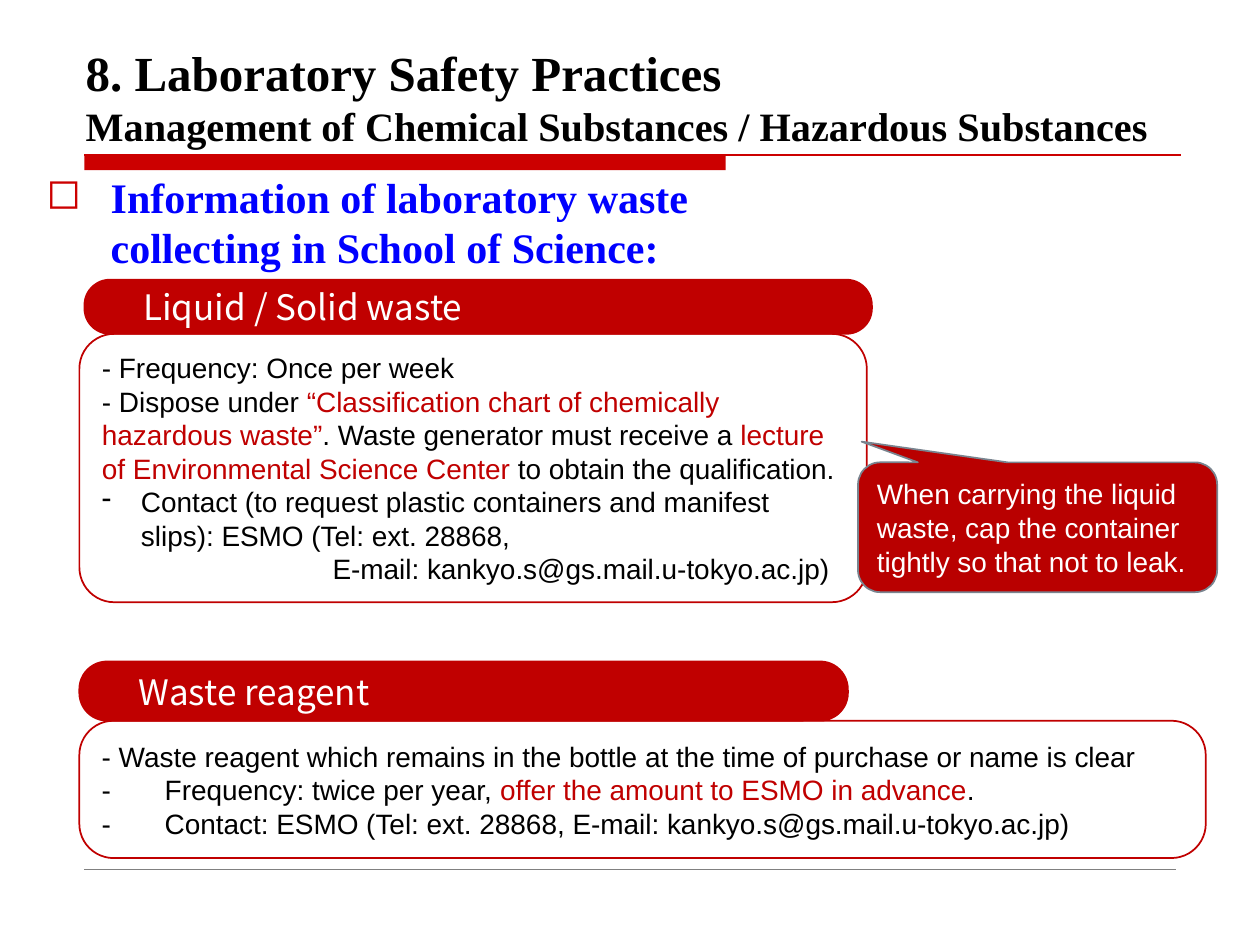
from lxml import etree
from pptx import Presentation
from pptx.dml.color import RGBColor
from pptx.enum import shapes, text
from pptx.oxml.ns import qn
from pptx.util import Inches, Pt

THEME = dict(
    red="C00000", rule="CC0000", callout="B90000", edge="79848F", gray="808080",
    blue="0000FF", black="000000", white="FFFFFF",
    serif="Times New Roman", sans="Arial", label="Noto Sans CJK JP",
    title=28, subtitle=23, heading=24, header=20, body=16,
)
T = THEME
SHAPE = shapes.MSO_SHAPE


def add_box(kind, at, fill, line, adjustments=()):
    sp = s.shapes.add_shape(kind, *map(Inches, at))
    sp.shadow.inherit = False
    sp.fill.solid()
    sp.fill.fore_color.rgb = RGBColor.from_string(T[fill])
    sp.line.color.rgb = RGBColor.from_string(T[line])
    sp.line.width = Pt(1)
    for i, value in enumerate(adjustments):
        sp.adjustments[i] = value
    return sp


def write(tf, paragraphs, font, size, bold=False, anchor=text.MSO_ANCHOR.MIDDLE):
    """Each paragraph is (runs, options); each run is (text, colour[, size])."""
    frame = dict(word_wrap=True, auto_size=text.MSO_AUTO_SIZE.NONE, vertical_anchor=anchor)
    for name, value in frame.items():
        setattr(tf, name, value)
    for i, (runs, options) in enumerate(paragraphs):
        p = tf.add_paragraph() if i else tf.paragraphs[0]
        p.alignment = text.PP_ALIGN.LEFT
        pPr = p._p.get_or_add_pPr()
        left, first = options.get("indent", (0, 0))
        pPr.set("marL", str(Inches(left)))
        pPr.set("indent", str(Inches(first)))
        if "bullet_color" in options:
            color = etree.SubElement(pPr, qn("a:buClr"))
            etree.SubElement(color, qn("a:srgbClr"), val=T[options["bullet_color"]])
        if "bullet" in options:
            etree.SubElement(pPr, qn("a:buChar"), char=options["bullet"])
        if "tab" in options:
            tabs = etree.SubElement(pPr, qn("a:tabLst"))
            etree.SubElement(tabs, qn("a:tab"), pos=str(Inches(options["tab"])), algn="l")
        for j, (words, color, *own_size) in enumerate(runs):
            if words == "\n":
                p.add_line_break()
                continue
            r = p.add_run()
            r.text = words
            style = dict(name=font, size=Pt(own_size[0] if own_size else size), bold=bold)
            for name, value in style.items():
                setattr(r.font, name, value)
            r.font.color.rgb = RGBColor.from_string(T[color])


prs = Presentation()
prs.slide_width, prs.slide_height = Inches(10), Inches(7.5)
s = prs.slides.add_slide(prs.slide_layouts[5])

# Title
title = s.shapes.title
title.left, title.top, title.width, title.height = map(Inches, (0.58, 0.42, 8.75, 0.82))
write(title.text_frame, [([
    ("8. Laboratory Safety Practices", "black"),
    ("\n", "black"),
    ("Management of Chemical Substances / Hazardous Substances", "black", T["subtitle"]),
], {})], T["serif"], T["title"], bold=True, anchor=text.MSO_ANCHOR.BOTTOM)

# Title bar and rules
bar = add_box(SHAPE.RECTANGLE, (0.67, 1.23, 5.09, 0.12), "rule", "rule")
bar.line.fill.background()
for y, right, color, width in ((1.23, 9.37, "rule", 0.75), (6.9, 9.33, "gray", 0.25)):
    rule = s.shapes.add_connector(shapes.MSO_CONNECTOR.STRAIGHT,
                                  Inches(0.67), Inches(y), Inches(right), Inches(y))
    rule.line.color.rgb = RGBColor.from_string(T[color])
    rule.line.width = Pt(width)
    etree.SubElement(rule._element.spPr, qn("a:effectLst"))

# Section heading
heading = s.shapes.add_textbox(*map(Inches, (0.27, 1.31, 6.69, 0.94)))
write(heading.text_frame, [(
    [("Information of laboratory waste collecting in School of Science:", "blue")],
    dict(indent=(0.51, -0.51), bullet="◻", bullet_color="rule"),
)], T["serif"], T["heading"], bold=True, anchor=text.MSO_ANCHOR.TOP)

# Waste panels
tab = dict(tab=0.19)
liquid = [
    ([("- Frequency: Once per week", "black")], tab),
    ([("- Dispose under ", "black"),
      ("“Classification chart of chemically hazardous waste”", "red"),
      (". Waste generator must receive a", "black"),
      (" lecture of Environmental Science Center", "red"),
      (" to obtain the qualification.", "black")], tab),
    ([("Contact (to request plastic containers and manifest slips): "
       "ESMO (Tel: ext. 28868,", "black")],
     dict(tab, indent=(0.31, -0.31), bullet="-")),
    ([("E-mail: kankyo.s@gs.mail.u-tokyo.ac.jp)", "black")], dict(indent=(1.83, 0))),
]
reagent = [
    ([("- Waste reagent which remains in the bottle at the time of purchase "
       "or name is clear", "black")], tab),
    ([("-\tFrequency: twice per year, ", "black"),
      ("offer the amount to ESMO in advance", "red"), (".", "black")], tab),
    ([("-\tContact: ESMO (Tel: ext. 28868, E-mail: kankyo.s@gs.mail.u-tokyo.ac.jp)",
       "black")], tab),
]
for at, corner, paragraphs in (
    ((0.63, 2.65, 6.25, 2.13), 0.13, liquid),
    ((0.63, 5.72, 8.94, 1.09), 0.25, reagent),
):
    panel = add_box(SHAPE.ROUNDED_RECTANGLE, at, "white", "red", [corner])
    write(panel.text_frame, paragraphs, T["sans"], T["body"])

# Panel headers
for at, label in (
    ((0.63, 5.25, 6.1, 0.47), "Waste reagent"),
    ((0.67, 2.22, 6.25, 0.43), "Liquid / Solid waste"),
):
    header = add_box(SHAPE.ROUNDED_RECTANGLE, at, "red", "red", [0.47])
    write(header.text_frame, [([(label, "white")], dict(indent=(0.31, 0)))],
          T["label"], T["header"])

# Safety callout
callout = add_box(SHAPE.ROUNDED_RECTANGULAR_CALLOUT, (6.81, 3.67, 2.85, 1.03),
                  "callout", "edge", (-0.49, -0.66, 0.17))
write(callout.text_frame, [([(
    "When carrying the liquid waste, cap the container tightly so that not to leak.",
    "white")], {})], T["sans"], T["body"])

prs.save("out.pptx")
